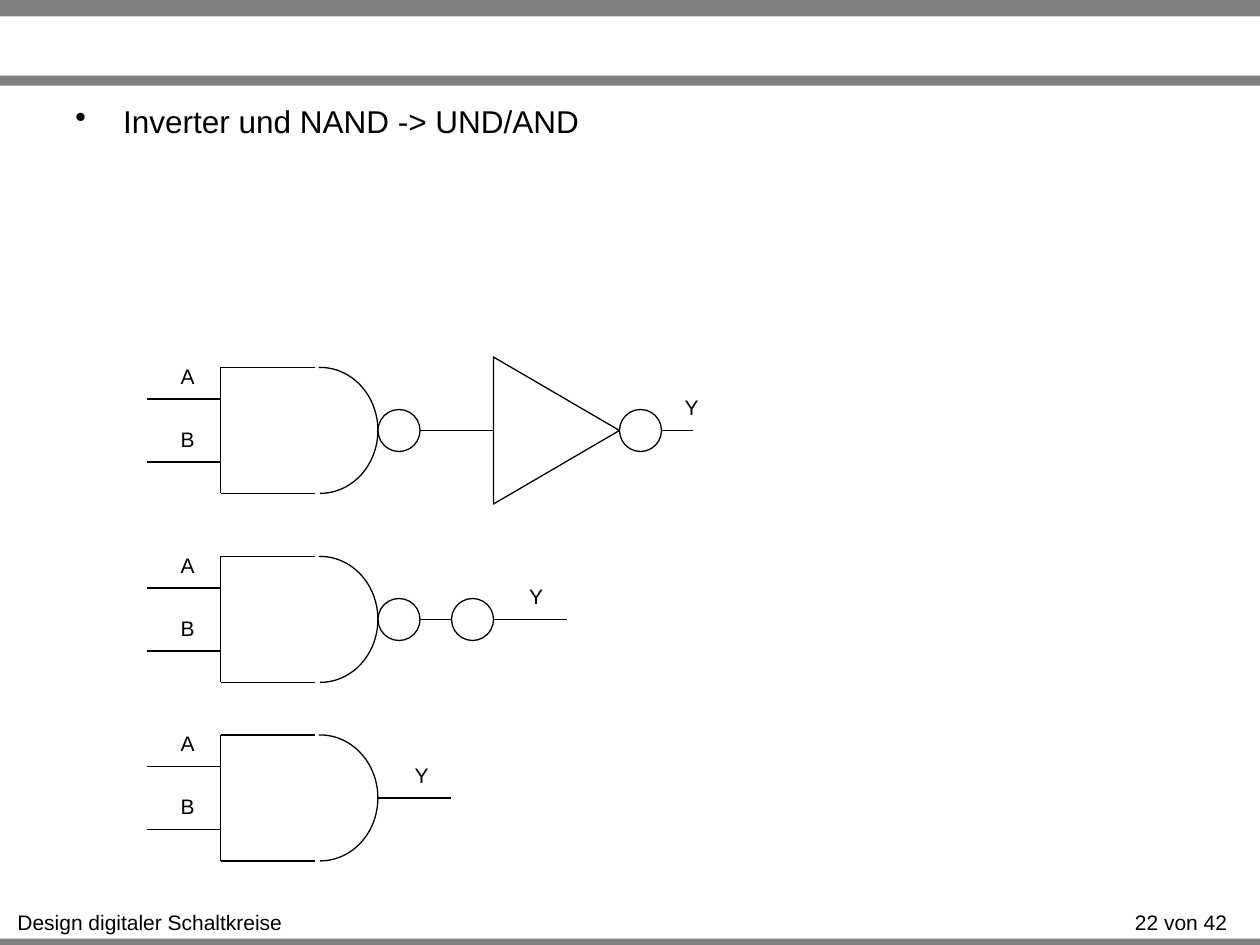
from dataclasses import dataclass
from lxml.etree import SubElement
from pptx import Presentation
from pptx.dml.color import RGBColor
from pptx.enum.shapes import MSO_CONNECTOR, MSO_SHAPE
from pptx.enum.text import MSO_AUTO_SIZE, PP_ALIGN
from pptx.oxml.ns import qn
from pptx.util import Inches, Pt


@dataclass(frozen=True)
class Theme:
    ink: RGBColor = RGBColor(0, 0, 0)
    bar: RGBColor = RGBColor(128, 128, 128)
    paper: RGBColor = RGBColor(255, 255, 255)
    font: str = "Arial"
    body: int = 18
    label: int = 12
    line: float = 0.75


THEME = Theme()
WIDE, HIGH = 10, 7.5
CELLS = 12  # grid cells per inch
BUBBLE = 4  # diameter of an inverting bubble, in cells


def cell(n):
    return Inches(n / CELLS)


def style(para, size):
    para.font.name = THEME.font
    para.font.size = Pt(size)
    para.font.color.rgb = THEME.ink


def bar(slide, top, high):
    box = slide.shapes.add_shape(MSO_SHAPE.RECTANGLE, 0, Inches(top),
                                 Inches(WIDE), Inches(high))
    box.shadow.inherit = False
    box.fill.solid()
    box.fill.fore_color.rgb = THEME.bar
    box.line.fill.background()


def label(slide, text, x, y, wide=3.72):
    box = slide.shapes.add_textbox(cell(x), cell(y), cell(wide), cell(3.6))
    frame = box.text_frame
    frame.word_wrap = False
    frame.auto_size = MSO_AUTO_SIZE.SHAPE_TO_FIT_TEXT
    frame.text = text
    para = frame.paragraphs[0]
    para.alignment = PP_ALIGN.CENTER
    style(para, THEME.label)


def bullet(slide, text):
    box = slide.shapes.add_textbox(Inches(0.5), Inches(0.76),
                                   Inches(9), Inches(2.16))
    frame = box.text_frame
    frame.word_wrap = True
    frame.text = text
    para = frame.paragraphs[0]
    props = para._p.get_or_add_pPr()
    indent = Inches(0.38)
    props.set("marL", str(indent))
    props.set("indent", str(-indent))
    SubElement(props, qn("a:buChar")).set("char", "•")
    style(para, THEME.body)


def wire(slide, x1, y1, x2, y2):
    line = slide.shapes.add_connector(MSO_CONNECTOR.STRAIGHT, cell(x1),
                                      cell(y1), cell(x2), cell(y2))
    line.line.color.rgb = THEME.ink
    line.line.width = Pt(THEME.line)
    SubElement(line._element.spPr, qn("a:effectLst"))


def outline(slide, kind, x, y, wide, high):
    form = slide.shapes.add_shape(kind, cell(x), cell(y),
                                  cell(wide), cell(high))
    form.shadow.inherit = False
    form.fill.background()
    form.line.color.rgb = THEME.ink
    form.line.width = Pt(THEME.line)
    return form


def bubble(slide, x, mid):
    ring = outline(slide, MSO_SHAPE.OVAL, x, mid - BUBBLE / 2, BUBBLE, BUBBLE)
    ring.fill.solid()
    ring.fill.fore_color.rgb = THEME.paper


def gate(slide, top):
    """AND body with inputs A and B; the output is at column 36."""
    left, high = 21, 12
    for name, row in (("A", top + 3), ("B", top + 9)):
        wire(slide, 14, row, left, row)
        label(slide, name, 16, row - 4)
    wire(slide, left, top, left, top + high)
    for row in (top, top + high):
        wire(slide, left, row, 30, row)
    arc = outline(slide, MSO_SHAPE.ARC, 25, top, 11, high)
    arc.adjustments[0] = 162
    arc.adjustments[1] = 54.904
    arc._element.spPr.find(qn("a:xfrm")).set("flipV", "1")


def frame(slide):
    for top, high in ((7.45, 0.08), (0, 0.13), (0.6, 0.08)):
        bar(slide, top, high)
    label(slide, "Design digitaler Schaltkreise", 0.36, 86, 27.84)
    label(slide, "22 von 42", 106, 86, 12.96)


def main():
    deck = Presentation()
    deck.slide_width, deck.slide_height = Inches(WIDE), Inches(HIGH)
    slide = deck.slides.add_slide(deck.slide_layouts[6])
    frame(slide)
    bullet(slide, "Inverter und NAND -> UND/AND")

    # Gate top, bubble columns, wires after the gate, column of label Y
    rows = (
        (35, (36, 59), ((40, 47), (59, 66)), 64),
        (53, (36, 43), ((40, 43), (47, 54)), 49.2),
        (70, (), ((36, 43),), 38.3),
    )
    for top, rings, wires, out in rows:
        mid = top + 6
        gate(slide, top)
        for start, end in wires:
            wire(slide, start, mid, end, mid)
        for col in rings:
            bubble(slide, col, mid)
        label(slide, "Y", out, mid - 4)

    # Inverter triangle, turned to point right
    tri = outline(slide, MSO_SHAPE.ISOSCELES_TRIANGLE, 46, 35, 14, 12)
    tri.rotation = 90

    deck.save("out.pptx")


if __name__ == "__main__":
    main()
